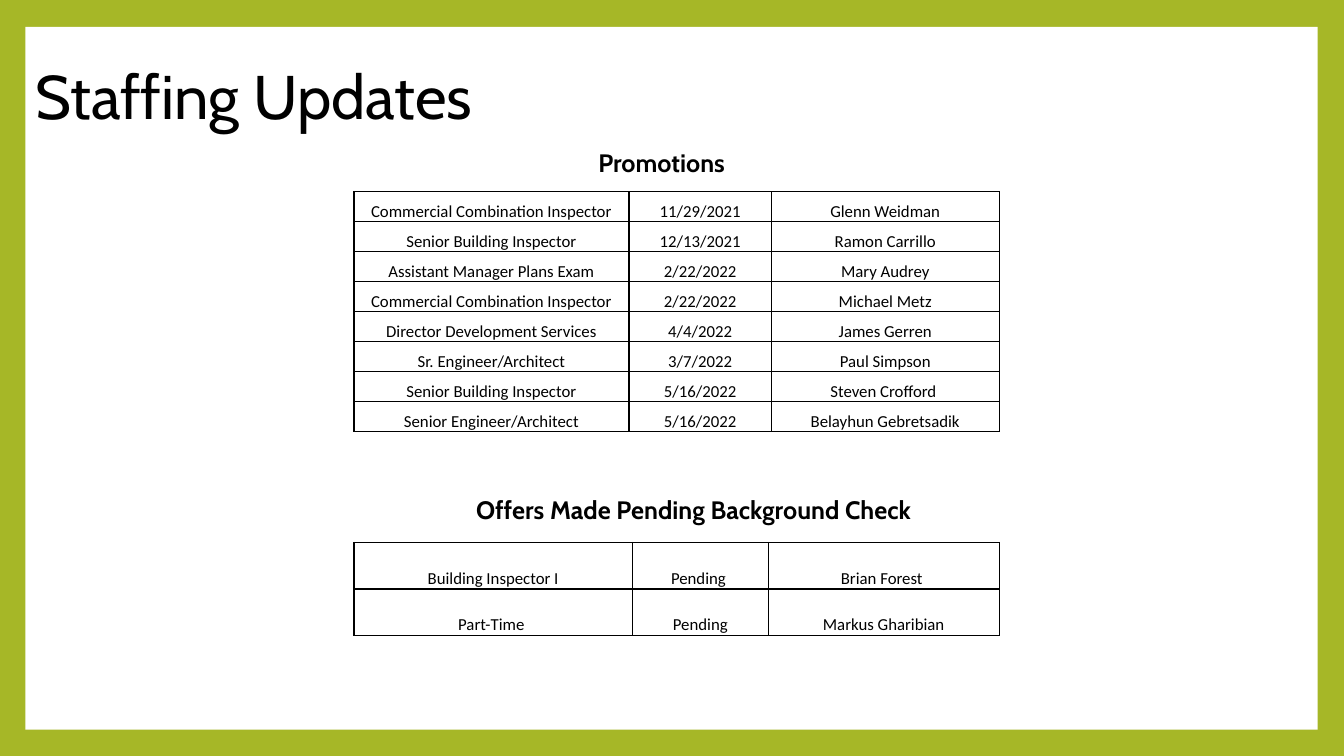
from lxml import etree
from pptx import Presentation
from pptx.dml.color import RGBColor
from pptx.enum.shapes import MSO_SHAPE
from pptx.enum.text import MSO_ANCHOR, MSO_AUTO_SIZE, PP_ALIGN
from pptx.oxml import parse_xml
from pptx.oxml.ns import nsdecls
from pptx.util import Cm, Pt

RECT = MSO_SHAPE.RECTANGLE
MIDDLE = MSO_ANCHOR.MIDDLE
BOTTOM = MSO_ANCHOR.BOTTOM
GROW = MSO_AUTO_SIZE.SHAPE_TO_FIT_TEXT
LEFT = PP_ALIGN.LEFT
CENTER = PP_ALIGN.CENTER

GREEN = RGBColor(0xA6, 0xB7, 0x27)
WHITE = RGBColor(0xFF, 0xFF, 0xFF)
BLACK = RGBColor(0x00, 0x00, 0x00)

STAFF = [
    ("Commercial Combination Inspector", "11/29/2021", "Glenn Weidman"),
    ("Senior Building Inspector", "12/13/2021", "Ramon Carrillo"),
    ("Assistant Manager Plans Exam", "2/22/2022", "Mary Audrey"),
    ("Commercial Combination Inspector", "2/22/2022", "Michael Metz"),
    ("Director Development Services", "4/4/2022", "James Gerren"),
    ("Sr. Engineer/Architect", "3/7/2022", "Paul Simpson"),
    ("Senior Building Inspector", "5/16/2022", "Steven Crofford "),
    ("Senior Engineer/Architect", "5/16/2022", "Belayhun Gebretsadik"),
]
OFFERS = [
    ("Building Inspector I", "Pending ", "Brian Forest "),
    ("Part-Time ", "Pending", "Markus Gharibian"),
]


class Board:
    head = "Cabin"
    body = "Calibri"

    def __init__(self, deck):
        self.slide = deck.slides.add_slide(deck.slide_layouts[5])
        self.shapes = self.slide.shapes
        back = self.slide.background.fill
        back.solid()
        back.fore_color.rgb = GREEN

    def style(self, para, name, size, align, bold=False):
        para.alignment = align
        font = para.font
        font.name, font.size, font.bold = name, Pt(size), bold
        font.color.rgb = BLACK

    def place(self, shape, box):
        shape.left, shape.top, shape.width, shape.height = map(Cm, box)

    def panel(self, *box):
        shape = self.shapes.add_shape(RECT, *map(Cm, box))
        shape.shadow.inherit = False
        shape.fill.solid()
        shape.fill.fore_color.rgb = WHITE
        shape.line.fill.background()
        self.shapes.element.insert(2, shape.element)

    def title(self, text, *box):
        shape = self.shapes.title
        self.place(shape, box)
        frame = shape.text_frame
        frame.text = text
        frame.vertical_anchor = MIDDLE
        para = frame.paragraphs[0]
        para.line_spacing = 0.9
        self.style(para, self.head, 44, LEFT)

    def label(self, text, *box):
        frame = self.shapes.add_textbox(*map(Cm, box)).text_frame
        frame.word_wrap = True
        frame.auto_size = GROW
        frame.text = text
        self.style(frame.paragraphs[0], self.head, 18, CENTER, True)

    def border(self, cell):
        props = cell._tc.get_or_add_tcPr()
        for side in ("lnL", "lnR", "lnT", "lnB"):
            line = parse_xml(f'<a:{side} {nsdecls("a")} w="{Pt(1)}"/>')
            fill = etree.SubElement(line, line.tag.replace(side, "solidFill"))
            tint = etree.SubElement(fill, line.tag.replace(side, "srgbClr"))
            tint.set("val", str(BLACK))
            props.append(line)

    def cell(self, cell, text):
        cell.text = text
        cell.vertical_anchor = BOTTOM
        cell.margin_left = cell.margin_right = Cm(0.18)
        cell.margin_top = cell.margin_bottom = 0
        self.style(cell.text_frame.paragraphs[0], self.body, 12, CENTER)
        self.border(cell)
        cell.fill.solid()
        cell.fill.fore_color.rgb = WHITE

    def table(self, rows, cols, left, top, height):
        box = map(Cm, (left, top, sum(cols), height))
        table = self.shapes.add_table(len(rows), len(cols), *box).table
        table.first_row = table.horz_banding = False
        for col, width in zip(table.columns, cols):
            col.width = Cm(width)
        for r, row in enumerate(rows):
            for c, text in enumerate(row):
                self.cell(table.cell(r, c), text)


def main():
    deck = Presentation()
    deck.slide_width, deck.slide_height = Cm(33.87), Cm(19.05)
    board = Board(deck)
    board.panel(0.64, 0.68, 32.57, 17.71)
    board.title("Staffing Updates", 0.64, 0.64, 27.43, 3.76)
    board.label("Promotions", 12.93, 3.58, 7.49, 1.02)
    board.table(STAFF, (6.93, 3.59, 5.74), 8.92, 4.83, 6.05)
    board.label("Offers Made Pending Background Check", 10.85, 12.32, 13.26, 1.02)
    board.table(OFFERS, (7.02, 3.42, 5.82), 8.92, 13.67, 2.34)
    deck.save("out.pptx")


if __name__ == "__main__":
    main()
